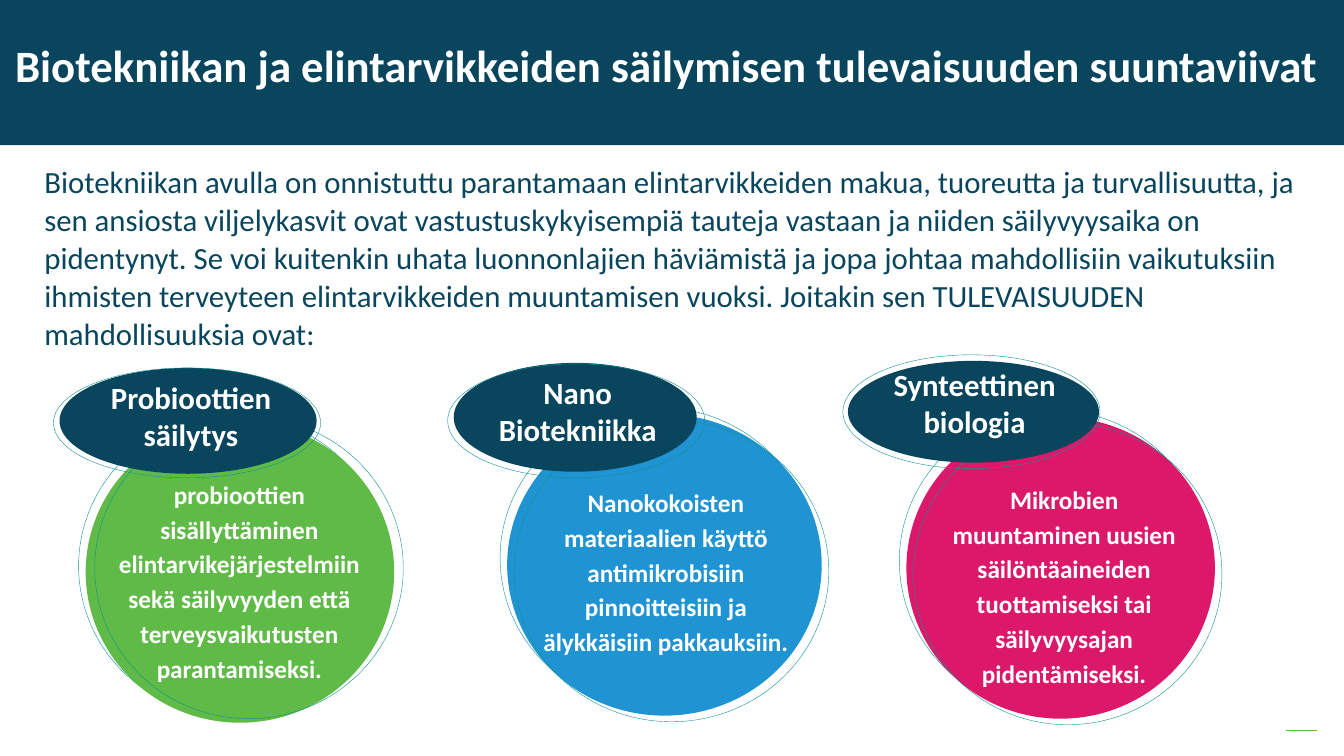
from typing import NamedTuple

from lxml import etree
from pptx import Presentation
from pptx import util as u
from pptx.dml.color import RGBColor
from pptx.enum import shapes, text
from pptx.oxml.ns import qn

NAVY, TEAL, GREEN, BLUE, PINK, WHITE = "09465E", "0D9390", "60BA47", "2094D2", "DB186A", "FFFFFF"


class Box(NamedTuple):
    left: float
    top: float
    width: float
    height: float

    def lengths(self) -> list:
        return [u.Inches(v) for v in self]


class Trend(NamedTuple):
    color: str
    back_ring: Box
    disc: Box
    front_ring: Box
    cap: Box
    cap_ring: Box
    heading: str
    heading_box: Box
    body: str
    body_box: Box


TRENDS = [
    Trend(GREEN, Box(0.78, 4.12, 3.06, 2.99), Box(0.85, 4.18, 3.06, 2.99),
          Box(0.94, 4.14, 3.06, 2.99), Box(0.59, 3.65, 2.55, 1.05), Box(0.53, 3.65, 2.65, 1.09),
          "Probioottien säilytys", Box(0.88, 3.71, 2.03, 0.84),
          "probioottien sisällyttäminen elintarvikejärjestelmiin sekä säilyvyyden että "
          "terveysvaikutusten parantamiseksi.", Box(1.04, 4.66, 2.67, 2.17)),
    Trend(BLUE, Box(4.96, 4.04, 3.12, 2.99), Box(5.03, 4.11, 3.12, 2.99),
          Box(5.1, 4.17, 3.12, 2.99), Box(4.5, 3.6, 2.41, 1.08), Box(4.44, 3.61, 2.55, 1.13),
          "Nano\nBiotekniikka", Box(4.6, 3.66, 2.26, 0.84),
          "Nanokokoisten materiaalien käyttö antimikrobisiin pinnoitteisiin ja "
          "älykkäisiin pakkauksiin.", Box(5.14, 4.74, 2.93, 1.82)),
    Trend(PINK, Box(8.92, 4.07, 3.06, 2.99), Box(8.99, 4.14, 3.06, 2.99),
          Box(9.06, 4.2, 3.06, 2.99), Box(8.41, 3.58, 2.49, 1.01), Box(8.36, 3.52, 2.55, 1.13),
          "Synteettinen biologia", Box(8.62, 3.58, 2.09, 1.21),
          "Mikrobien muuntaminen uusien säilöntäaineiden tuottamiseksi tai "
          "säilyvyysajan pidentämiseksi.", Box(9.2, 4.71, 2.71, 2.66)),
]


def rgb(color: str) -> RGBColor:
    return RGBColor.from_string(color)


def write(sp, content: str, *, size: float, color: str = WHITE, bold: bool = True,
          align=text.PP_ALIGN.CENTER, spacing: float = 1.0, after: float = 0) -> None:
    tf = sp.text_frame
    tf.word_wrap = True
    tf.auto_size = text.MSO_AUTO_SIZE.NONE
    tf.vertical_anchor = text.MSO_ANCHOR.TOP
    tf.text = content
    for p in tf.paragraphs:
        p.alignment = align
        p.line_spacing = spacing
        p.space_before = u.Pt(0)
        p.space_after = u.Pt(after)
        for r in p.runs:
            r.font.name = "Calibri"
            r.font.size = u.Pt(size)
            r.font.bold = bold
            r.font.color.rgb = rgb(color)


def place(sp, box: Box) -> None:
    sp.left, sp.top, sp.width, sp.height = box.lengths()


def add_filled(s, kind, box: Box, color: str) -> None:
    sp = s.shapes.add_shape(kind, *box.lengths())
    sp.shadow.inherit = False
    sp.fill.solid()
    sp.fill.fore_color.rgb = rgb(color)
    sp.line.fill.background()


def add_ring(s, box: Box) -> None:
    sp = s.shapes.add_shape(shapes.MSO_SHAPE.OVAL, *box.lengths())
    sp.shadow.inherit = False
    sp.fill.background()
    sp.line.color.rgb = rgb(TEAL)
    sp.line.width = u.Pt(0.28)


def add_trend(s, trend: Trend) -> None:
    oval = shapes.MSO_SHAPE.OVAL
    add_ring(s, trend.back_ring)
    add_filled(s, oval, trend.disc, trend.color)
    add_ring(s, trend.front_ring)
    add_filled(s, oval, trend.cap, NAVY)
    add_ring(s, trend.cap_ring)
    write(s.shapes.add_textbox(*trend.heading_box.lengths()), trend.heading, size=22)
    write(s.shapes.add_textbox(*trend.body_box.lengths()), trend.body,
          size=18, spacing=1.15, after=8)


def add_header(s) -> None:
    add_filled(s, shapes.MSO_SHAPE.RECTANGLE, Box(0, 0, 13.33, 1.44), NAVY)
    band = s.shapes[-1]
    title = s.shapes.title
    title.element.addprevious(band.element)
    place(title, Box(0.05, 0.38, 13.21, 0.88))
    write(title, "Biotekniikan ja elintarvikkeiden säilymisen tulevaisuuden suuntaviivat",
          size=32, align=text.PP_ALIGN.LEFT, spacing=0.9)


def add_intro(s) -> None:
    intro = s.placeholders[1]
    place(intro, Box(0.34, 1.55, 13.09, 1.82))
    write(intro, "Biotekniikan avulla on onnistuttu parantamaan elintarvikkeiden makua, tuoreutta "
          "ja turvallisuutta, ja sen ansiosta viljelykasvit ovat vastustuskykyisempiä tauteja "
          "vastaan ja niiden säilyvyysaika on pidentynyt. Se voi kuitenkin uhata luonnonlajien "
          "häviämistä ja jopa johtaa mahdollisiin vaikutuksiin ihmisten terveyteen "
          "elintarvikkeiden muuntamisen vuoksi. Joitakin sen TULEVAISUUDEN mahdollisuuksia ovat:",
          size=22, color=NAVY, bold=False, align=text.PP_ALIGN.LEFT, spacing=1.03)
    intro.text_frame.margin_right = u.Inches(0.3)
    props = intro.text_frame.paragraphs[0]._p.get_or_add_pPr()
    props.set("marL", "0")
    props.set("indent", "0")
    etree.SubElement(props, qn("a:buNone"))


def add_footer_rule(s) -> None:
    rule = s.shapes.add_connector(shapes.MSO_CONNECTOR.STRAIGHT, u.Inches(12.75), u.Inches(7.25),
                                  u.Inches(13.06), u.Inches(7.25))
    rule.line.color.rgb = rgb(GREEN)
    rule.line.width = u.Pt(1)
    etree.SubElement(rule.element.spPr, qn("a:effectLst"))


def main() -> None:
    prs = Presentation()
    prs.slide_width, prs.slide_height = u.Inches(13.33), u.Inches(7.5)
    s = prs.slides.add_slide(prs.slide_layouts[1])
    add_header(s)
    add_intro(s)
    add_footer_rule(s)
    for trend in TRENDS:
        add_trend(s, trend)
    prs.save("out.pptx")


if __name__ == "__main__":
    main()
